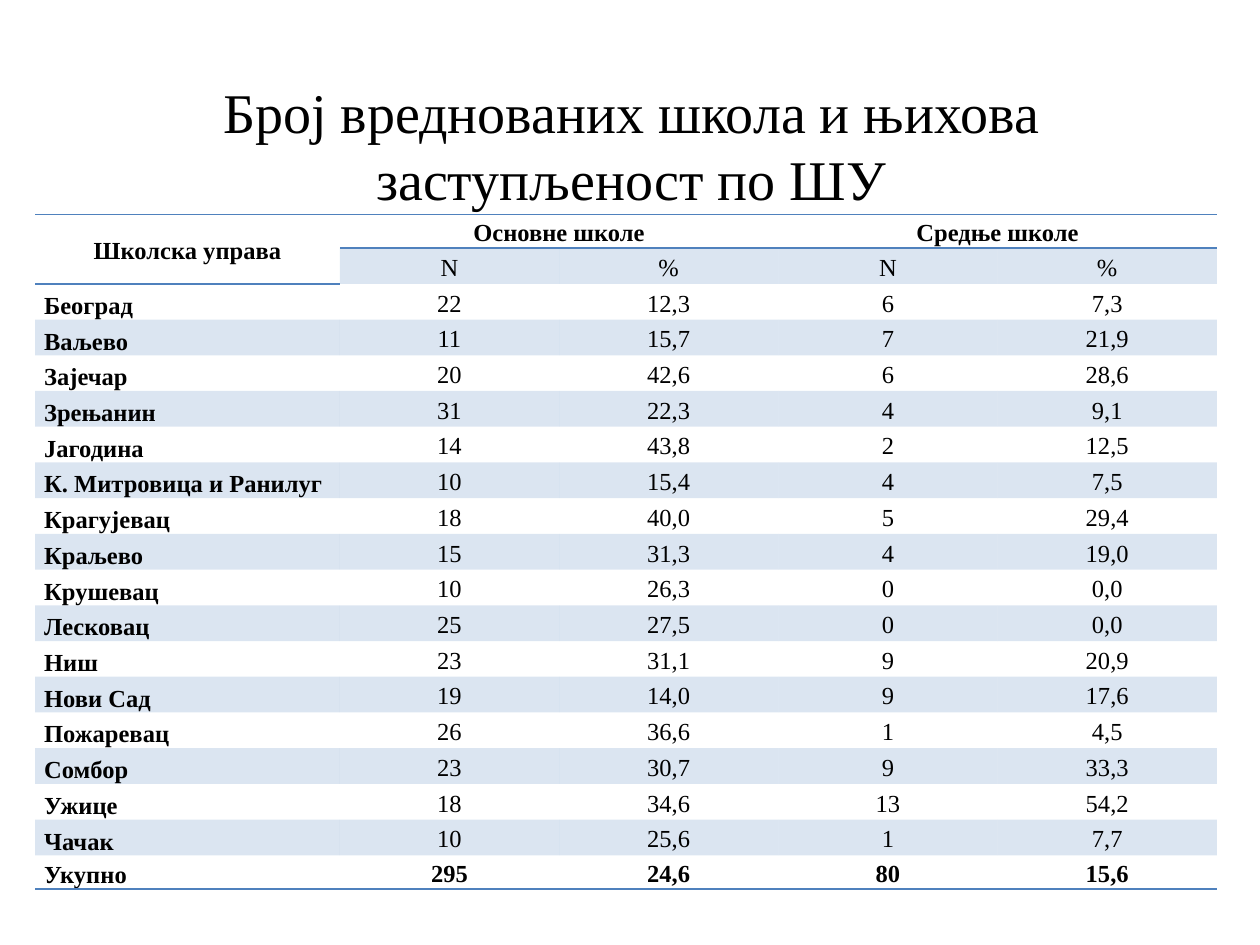
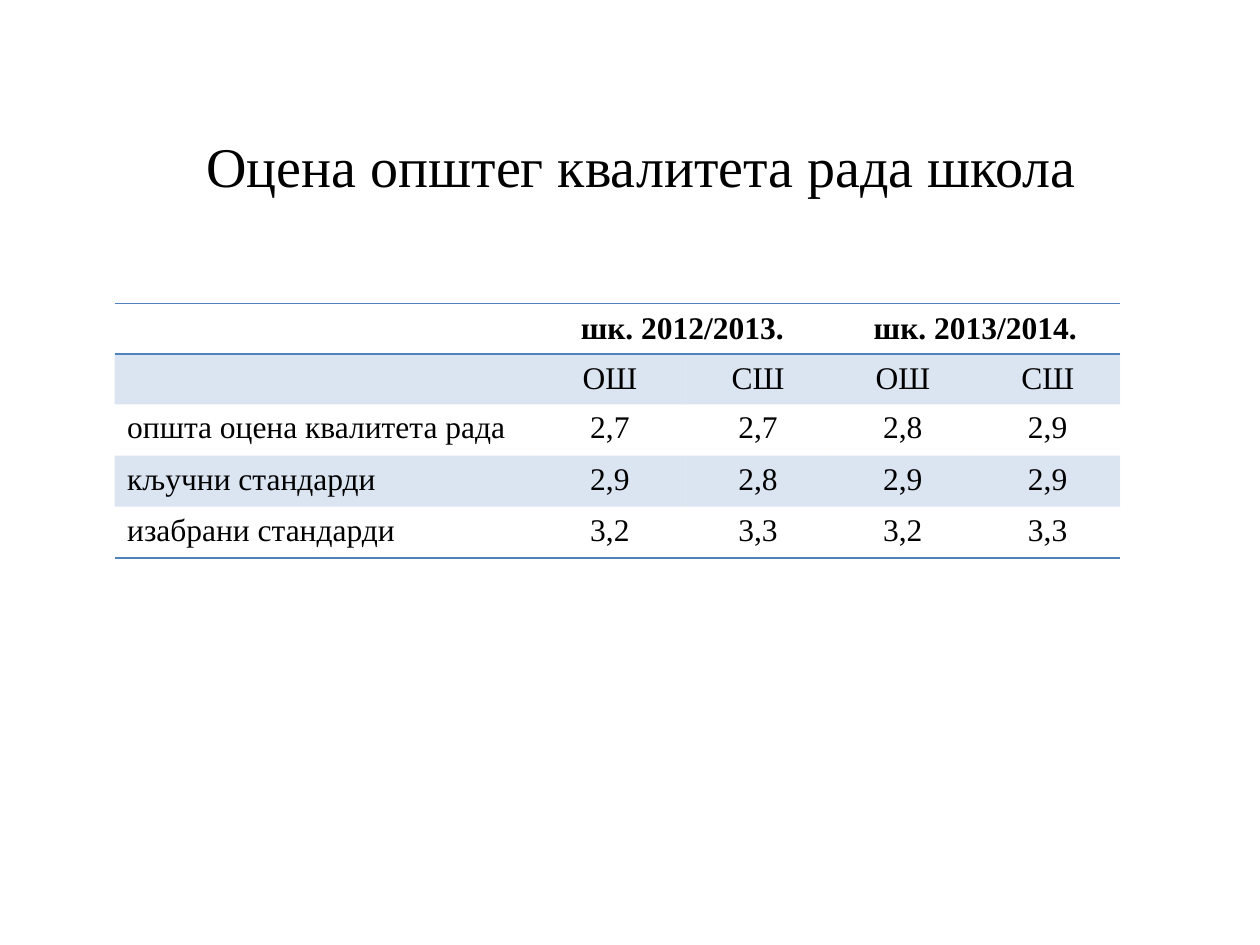
from dataclasses import dataclass

import lxml.etree
import pptx
import pptx.dml.color
import pptx.enum.text
import pptx.oxml
import pptx.oxml.ns
import pptx.util

Cm = pptx.util.Cm
Pt = pptx.util.Pt
Align = pptx.enum.text.PP_ALIGN
Anchor = pptx.enum.text.MSO_ANCHOR
qn = pptx.oxml.ns.qn


@dataclass(frozen=True)
class Theme:
    """Colours, font and type sizes shared by the slides."""
    font: str = "Times New Roman"
    text: str = "000000"
    accent: str = "4F81BD"
    band_alpha: int = 20000
    title_size: int = 32
    dense_size: int = 14
    table_size: int = 18
    rule_width: int = 1
    plain_table: str = "{2D5ABB26-0587-4C30-8999-92F81FD0307C}"


THEME = Theme()

SCHOOL_COUNTS = [
    ("Школска управа", "Основне школе", "", "Средње школе", ""),
    ("", "N", "%", "N", "%"),
    ("Београд", "22", "12,3", "6", "7,3"),
    ("Ваљево", "11", "15,7", "7", "21,9"),
    ("Зајечар", "20", "42,6", "6", "28,6"),
    ("Зрењанин", "31", "22,3", "4", "9,1"),
    ("Јагодина", "14", "43,8", "2", "12,5"),
    ("К. Митровица и Ранилуг", "10", "15,4", "4", "7,5"),
    ("Крагујевац", "18", "40,0", "5", "29,4"),
    ("Краљево", "15", "31,3", "4", "19,0"),
    ("Крушевац", "10", "26,3", "0", "0,0"),
    ("Лесковац", "25", "27,5", "0", "0,0"),
    ("Ниш", "23", "31,1", "9", "20,9"),
    ("Нови Сад", "19", "14,0", "9", "17,6"),
    ("Пожаревац", "26", "36,6", "1", "4,5"),
    ("Сомбор", "23", "30,7", "9", "33,3"),
    ("Ужице", "18", "34,6", "13", "54,2"),
    ("Чачак", "10", "25,6", "1", "7,7"),
    ("Укупно", "295", "24,6", "80", "15,6"),
]

QUALITY_SCORES = [
    ("", "шк. 2012/2013.", "", "шк. 2013/2014.", ""),
    ("", "ОШ", "СШ", "ОШ", "СШ"),
    ("општа оцена квалитета рада", "2,7", "2,7", "2,8", "2,9"),
    ("кључни стандарди", "2,9", "2,8", "2,9", "2,9"),
    ("изабрани стандарди", "3,2", "3,3", "3,2", "3,3"),
]


def write_text(text_frame, text, size, align, bold=False):
    """Set one paragraph of text in the theme font and return it."""
    text_frame.text = text
    paragraph = text_frame.paragraphs[0]
    paragraph.alignment = align
    for run in paragraph.runs:
        run.font.name = THEME.font
        run.font.size = Pt(size)
        run.font.bold = bold
        run.font.color.rgb = pptx.dml.color.RGBColor.from_string(THEME.text)
    return paragraph


def add_title(slide, text, left, top):
    """Add a centred title with its box at the given corner."""
    shape = slide.shapes.add_textbox(Cm(left), Cm(top), Cm(22.86), Cm(3.18))
    text_frame = shape.text_frame
    text_frame.word_wrap = True
    text_frame.vertical_anchor = Anchor.MIDDLE
    write_text(text_frame, text, THEME.title_size, Align.CENTER)


def add_rule(cell, side):
    """Draw an accent line on the lnT or lnB side of a cell."""
    properties = cell._tc.get_or_add_tcPr()
    line = lxml.etree.SubElement(properties, qn(f"a:{side}"), w=str(Pt(THEME.rule_width)))
    fill = lxml.etree.SubElement(line, qn("a:solidFill"))
    lxml.etree.SubElement(fill, qn("a:srgbClr"), val=THEME.accent)


def fill_band(cell):
    """Fill a cell with the translucent accent colour."""
    cell.fill.solid()
    cell.fill.fore_color.rgb = pptx.dml.color.RGBColor.from_string(THEME.accent)
    color = cell._tc.tcPr.find(f"{qn('a:solidFill')}/{qn('a:srgbClr')}")
    lxml.etree.SubElement(color, qn("a:alpha"), val=str(THEME.band_alpha))


def add_ruled_table(slide, rows, left, top, widths, heights, merge_corner=False):
    """Add a banded table with paired column headings and return it."""
    frame = slide.shapes.add_table(len(rows), len(widths), Cm(left), Cm(top),
                                   Cm(sum(widths)), Cm(sum(heights)))
    table = frame.table
    table.first_row = table.horz_banding = False
    table._tbl.tblPr.find(qn("a:tableStyleId")).text = THEME.plain_table
    for column, width in zip(table.columns, widths):
        column.width = Cm(width)
    for row, height in zip(table.rows, heights):
        row.height = Cm(height)
    for first in (1, 3):
        table.cell(0, first).merge(table.cell(0, first + 1))
    if merge_corner:
        table.cell(0, 0).merge(table.cell(1, 0))
    last = len(rows) - 1
    for row in range(len(rows)):
        for column in range(len(widths)):
            cell = table.cell(row, column)
            in_corner = merge_corner and column == 0 and row < 2
            if row == 0:
                add_rule(cell, "lnT")
            if row in (0, last) or in_corner:
                add_rule(cell, "lnB")
            if row % 2 and not in_corner:
                fill_band(cell)
    return table


def add_count_table(slide, left, top):
    """Add the dense table of evaluated schools per administration."""
    last = len(SCHOOL_COUNTS) - 1
    heights = [0.63] + [0.72] * (last - 1) + [0.63]
    table = add_ruled_table(slide, SCHOOL_COUNTS, left, top, [6.14] + [4.42] * 4,
                            heights, merge_corner=True)
    for row, values in enumerate(SCHOOL_COUNTS):
        for column, value in enumerate(values):
            cell = table.cell(row, column)
            is_name = column == 0 and row > 1
            cell.margin_left = cell.margin_right = Cm(0.18)
            cell.margin_top = cell.margin_bottom = 0
            cell.vertical_anchor = Anchor.BOTTOM if is_name else Anchor.MIDDLE
            if cell.is_spanned:
                continue
            paragraph = write_text(cell.text_frame, value, THEME.dense_size,
                                   Align.LEFT if is_name else Align.CENTER,
                                   bold=column == 0 or row in (0, last))
            paragraph.line_spacing = 1.15
            if row < 2 or is_name:
                paragraph.space_after = Pt(10)


def add_score_table(slide, left, top):
    """Add the table of quality scores for two school years."""
    table = add_ruled_table(slide, QUALITY_SCORES, left, top,
                            [8.46, 3.05, 2.92, 2.92, 2.92], [0.96] * 2 + [1.03] * 3)
    for row, values in enumerate(QUALITY_SCORES):
        for column, value in enumerate(values):
            cell = table.cell(row, column)
            if row < 2:
                cell.vertical_anchor = Anchor.MIDDLE
            if value:
                write_text(cell.text_frame, value, THEME.table_size,
                           Align.CENTER if column else Align.LEFT, bold=row == 0)


def main():
    """Build both slides and save the presentation."""
    presentation = pptx.Presentation()
    presentation.slide_width = Cm(25.4)
    presentation.slide_height = Cm(19.05)
    blank = presentation.slide_layouts[6]

    slide = presentation.slides.add_slide(blank)
    add_title(slide, "Број вреднованих школа и њихова заступљеност по ШУ", 1.3, 1.32)
    add_count_table(slide, 0.71, 4.32)

    slide = presentation.slides.add_slide(blank)
    add_title(slide, "Оцена општег квалитета рада школа", 1.5, 1.73)
    add_score_table(slide, 2.31, 6.12)

    presentation.save("out.pptx")


if __name__ == "__main__":
    main()
